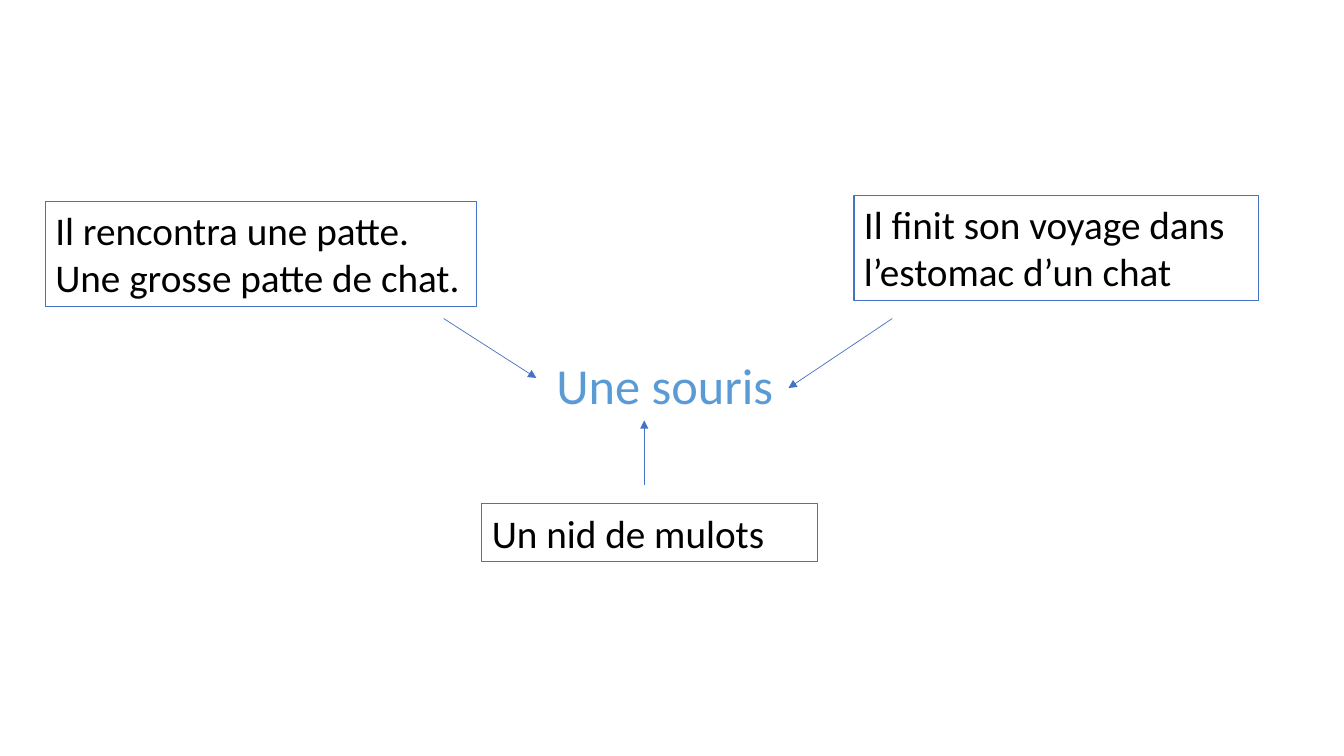
from lxml.etree import SubElement
from pptx import Presentation
from pptx.dml.color import RGBColor
from pptx.enum.shapes import MSO_CONNECTOR
from pptx.enum.text import MSO_AUTO_SIZE
from pptx.oxml.ns import qn
from pptx.util import Inches, Pt

COLORS = {"text": "000000", "line": "4472C4", "center": "5B9BD5"}
FONT = "Calibri"

# text, left, top, width, height
CLUES = [
    ("Il finit son voyage dans l’estomac d’un chat", 8.47, 1.94, 4.01, 1.04),
    ("Il rencontra une patte. Une grosse patte de chat.", 0.45, 2, 4.28, 1.04),
    ("Un nid de mulots", 4.78, 5, 3.33, 0.57),
]
# start x, start y, end x, end y
ARROWS = [
    (4.4, 3.16, 5.32, 3.75),
    (8.85, 3.16, 7.82, 3.85),
    (6.39, 4.81, 6.39, 4.17),
]


def rgb(name):
    return RGBColor.from_string(COLORS[name])


def add_text(slide, text, left, top, width, height, size, color):
    shape = slide.shapes.add_textbox(
        Inches(left), Inches(top), Inches(width), Inches(height))
    text_frame = shape.text_frame
    text_frame.word_wrap = True
    text_frame.auto_size = MSO_AUTO_SIZE.SHAPE_TO_FIT_TEXT
    text_frame.text = text
    font = text_frame.paragraphs[0].runs[0].font
    font.name = FONT
    font.size = Pt(size)
    font.color.rgb = rgb(color)
    return shape


def add_clue(slide, text, left, top, width, height):
    """Add a clue in an outlined box."""
    shape = add_text(slide, text, left, top, width, height, 28, "text")
    shape.line.color.rgb = rgb("line")
    shape.line.width = Pt(0.75)


def add_arrow(slide, start_x, start_y, end_x, end_y):
    arrow = slide.shapes.add_connector(
        MSO_CONNECTOR.STRAIGHT,
        Inches(start_x), Inches(start_y), Inches(end_x), Inches(end_y))
    arrow.line.color.rgb = rgb("line")
    arrow.line.width = Pt(0.5)
    properties = arrow._element.spPr
    SubElement(properties.find(qn("a:ln")), qn("a:tailEnd"), type="triangle")
    SubElement(properties, qn("a:effectLst"))


def main():
    presentation = Presentation()
    presentation.slide_width = Inches(13.33)
    presentation.slide_height = Inches(7.5)
    slide = presentation.slides.add_slide(presentation.slide_layouts[6])
    for clue in CLUES:
        add_clue(slide, *clue)
    add_text(slide, "Une souris", 5.42, 3.46, 2.53, 0.71, 36, "center")
    for arrow in ARROWS:
        add_arrow(slide, *arrow)
    presentation.save("out.pptx")


if __name__ == "__main__":
    main()
